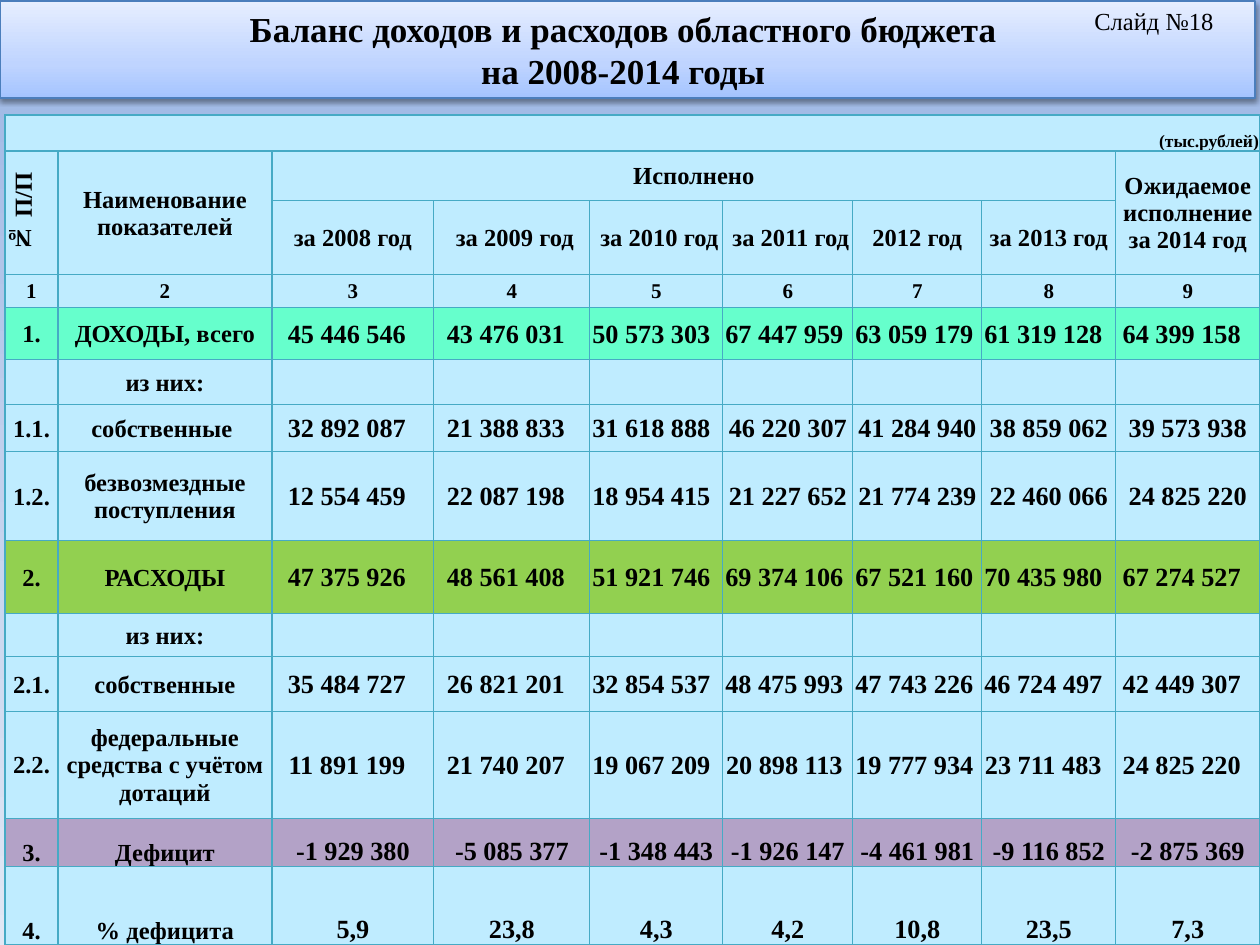
"""Build the budget balance slide: a gradient title bar and one table."""
from copy import deepcopy

from lxml import etree
from pptx import Presentation
from pptx import util as u
from pptx.dml.color import RGBColor
from pptx.enum import shapes, text
from pptx.oxml import ns

BLACK = RGBColor(0x00, 0x00, 0x00)
SKY = RGBColor(0xBF, 0xEC, 0xFF)
MINT = RGBColor(0x66, 0xFF, 0xCC)
GREEN = RGBColor(0x92, 0xD0, 0x50)
LILAC = RGBColor(0xB3, 0xA2, 0xC7)
TEAL = RGBColor(0x46, 0xAA, 0xC5)
BLUE = RGBColor(0x4B, 0x7E, 0xBC)
PAGE = [(0, RGBColor(0x9A, 0xB5, 0xE4)), (0.5, RGBColor(0xC2, 0xD1, 0xED)),
        (1, RGBColor(0xE1, 0xE8, 0xF5))]
BAR = [(0, RGBColor(0xA4, 0xC4, 0xFF)), (0.35, RGBColor(0xBF, 0xD4, 0xFF)),
       (1, RGBColor(0xE6, 0xEE, 0xFF))]

TITLE = ["Баланс доходов и расходов областного бюджета ", "на 2008-2014 годы "]
LABEL = "Слайд №18"
UNIT = "(тыс.рублей)"
COLUMNS = [53, 214, 162, 156, 133, 130, 129, 134, 144]
ROWS = [36, 50, 74, 33, 52, 45, 47, 89, 73, 43, 55, 107, 48, 78]
SPANS = [(0, 0, 0, 8), (1, 0, 2, 0), (1, 1, 2, 1), (1, 2, 1, 7), (1, 8, 2, 8)]
HEADINGS = {(1, 0): "№ П/П", (1, 1): "Наименование показателей",
            (1, 2): "Исполнено", (1, 8): "Ожидаемое исполнение за 2014 год"}
YEARS = ["за 2008 год", " за 2009 год", " за 2010 год", " за 2011 год",
         "2012 год", "за 2013 год"]
# number, name, values, count of left-shifted values, fill
INDICATORS = [
    ("1.", "ДОХОДЫ, всего", ["45 446 546", "43 476 031", "50 573 303", "67 447 959",
                             "63 059 179", "61 319 128", "64 399 158"], 7, MINT),
    ("", "из них:", [], 0, SKY),
    ("1.1.", "собственные ", ["32 892 087", "21 388 833", "31 618 888", "46 220 307",
                              "41 284 940", "38 859 062", "39 573 938"], 3, SKY),
    ("1.2.", "безвозмездные поступления",
     ["12 554 459", "22 087 198", "18 954 415", "21 227 652",
      "21 774 239", "22 460 066", "24 825 220"], 3, SKY),
    ("2.", "РАСХОДЫ", ["47 375 926", "48 561 408", "51 921 746", "69 374 106",
                       "67 521 160", "70 435 980", "67 274 527"], 7, GREEN),
    ("", "из них:", [], 0, SKY),
    ("2.1.", "собственные", ["35 484 727", "26 821 201", "32 854 537", "48 475 993",
                             "47 743 226", "46 724 497", "42 449 307"], 7, SKY),
    ("2.2.", "федеральные средства с учётом дотаций",
     ["11 891 199", "21 740 207", "19 067 209", "20 898 113",
      "19 777 934", "23 711 483", "24 825 220"], 7, SKY),
    ("3.", "Дефицит", ["-1 929 380", "-5 085 377", "-1 348 443", "-1 926 147",
                       "-4 461 981", "-9 116 852", "-2 875 369"], 0, LILAC),
    ("4.", "% дефицита", ["5,9", "23,8", "4,3", "4,2", "10,8", "23,5", "7,3"], 0, SKY),
]
FIRST_INDICATOR, FIRST_BOTTOM = 4, 12
VALUE_WIDTH, SHIFT = 122, 13


def px(count):
    return u.Emu(round(count * 914400 / 126))


def write(frame, lines, size=14, bold=True, align=text.PP_ALIGN.CENTER):
    for index, line in enumerate(lines):
        paragraph = frame.add_paragraph() if index else frame.paragraphs[0]
        paragraph.alignment = align
        run = paragraph.add_run()
        run.text = line
        run.font.name, run.font.size = "Times New Roman", u.Pt(size)
        run.font.bold, run.font.color.rgb = bold, BLACK


def shade(fill, root, stops, angle):
    fill.gradient()
    fill.gradient_angle = angle
    listing = root.find(".//" + ns.qn("a:gsLst"))
    listing.append(deepcopy(listing[0]))
    for stop, (position, color) in zip(fill.gradient_stops, stops):
        stop.position, stop.color.rgb = position, color


def outline(cell):
    properties = cell._tc.get_or_add_tcPr()
    for index, side in enumerate(("lnL", "lnR", "lnT", "lnB")):
        line = etree.Element(ns.qn("a:" + side), w=str(u.Pt(0.75)))
        solid = etree.SubElement(line, ns.qn("a:solidFill"))
        etree.SubElement(solid, ns.qn("a:srgbClr"), val=str(TEAL))
        properties.insert(index, line)


def add_title(slide):
    bar = slide.shapes.add_shape(shapes.MSO_SHAPE.RECTANGLE, 0, px(1), px(1255), px(97))
    shade(bar.fill, bar._element, BAR, 90)
    bar.line.color.rgb, bar.line.width = BLUE, u.Pt(0.75)
    bar.shadow.inherit = False
    effects = bar._element.spPr.find(ns.qn("a:effectLst"))
    shadow = etree.SubElement(effects, ns.qn("a:outerShdw"), blurRad="40000",
                              dist="20000", dir="5400000", rotWithShape="0")
    tint = etree.SubElement(shadow, ns.qn("a:srgbClr"), val=str(BLACK))
    etree.SubElement(tint, ns.qn("a:alpha"), val="38000")
    write(bar.text_frame, TITLE, size=20)
    label = slide.shapes.add_textbox(px(1082), 0, px(178), px(43))
    write(label.text_frame, [LABEL], bold=False, align=text.PP_ALIGN.LEFT)
    for frame in (bar.text_frame, label.text_frame):
        frame.word_wrap = True
        frame.auto_size = text.MSO_AUTO_SIZE.SHAPE_TO_FIT_TEXT


def add_balance(slide):
    balance = slide.shapes.add_table(len(ROWS), len(COLUMNS), px(5), px(115),
                                     px(sum(COLUMNS)), px(sum(ROWS))).table
    balance.first_row = balance.horz_banding = False
    for column, width in zip(balance.columns, COLUMNS):
        column.width = px(width)
    for row, height in zip(balance.rows, ROWS):
        row.height = px(height)
    fills = [SKY] * FIRST_INDICATOR + [indicator[-1] for indicator in INDICATORS]
    for r, fill in enumerate(fills):
        bottom = r == 0 or r >= FIRST_BOTTOM
        for cell in balance.rows[r].cells:
            cell.fill.solid()
            cell.fill.fore_color.rgb = fill
            cell.margin_left = cell.margin_right = cell.margin_top = px(1)
            cell.margin_bottom = 0
            cell.vertical_anchor = text.MSO_ANCHOR.BOTTOM if bottom else text.MSO_ANCHOR.MIDDLE
            outline(cell)
    for top, left, low, right in SPANS:
        balance.cell(top, left).merge(balance.cell(low, right))

    write(balance.cell(0, 0).text_frame, [UNIT], size=10, align=text.PP_ALIGN.RIGHT)
    for (r, c), heading in HEADINGS.items():
        write(balance.cell(r, c).text_frame, [heading])
    balance.cell(1, 0)._tc.tcPr.set("vert", "vert270")
    for c, year in enumerate(YEARS, 2):
        write(balance.cell(2, c).text_frame, [year])
    for c in range(len(COLUMNS)):
        write(balance.cell(3, c).text_frame, [str(c + 1)], size=12)
    for r, (number, name, values, shifted, _) in enumerate(INDICATORS, FIRST_INDICATOR):
        for c, entry in enumerate([number, name, *values]):
            if entry:
                cell = balance.cell(r, c)
                write(cell.text_frame, [entry], size=14 if c < 2 else 15)
                if 2 <= c < 2 + shifted:
                    cell.margin_right = px(min(SHIFT, COLUMNS[c] - VALUE_WIDTH))


def main():
    deck = Presentation()
    deck.slide_width, deck.slide_height = px(1260), px(945)
    slide = deck.slides.add_slide(deck.slide_layouts[6])
    shade(slide.background.fill, slide._element, PAGE, 270)
    add_balance(slide)
    add_title(slide)
    deck.save("out.pptx")


if __name__ == "__main__":
    main()
